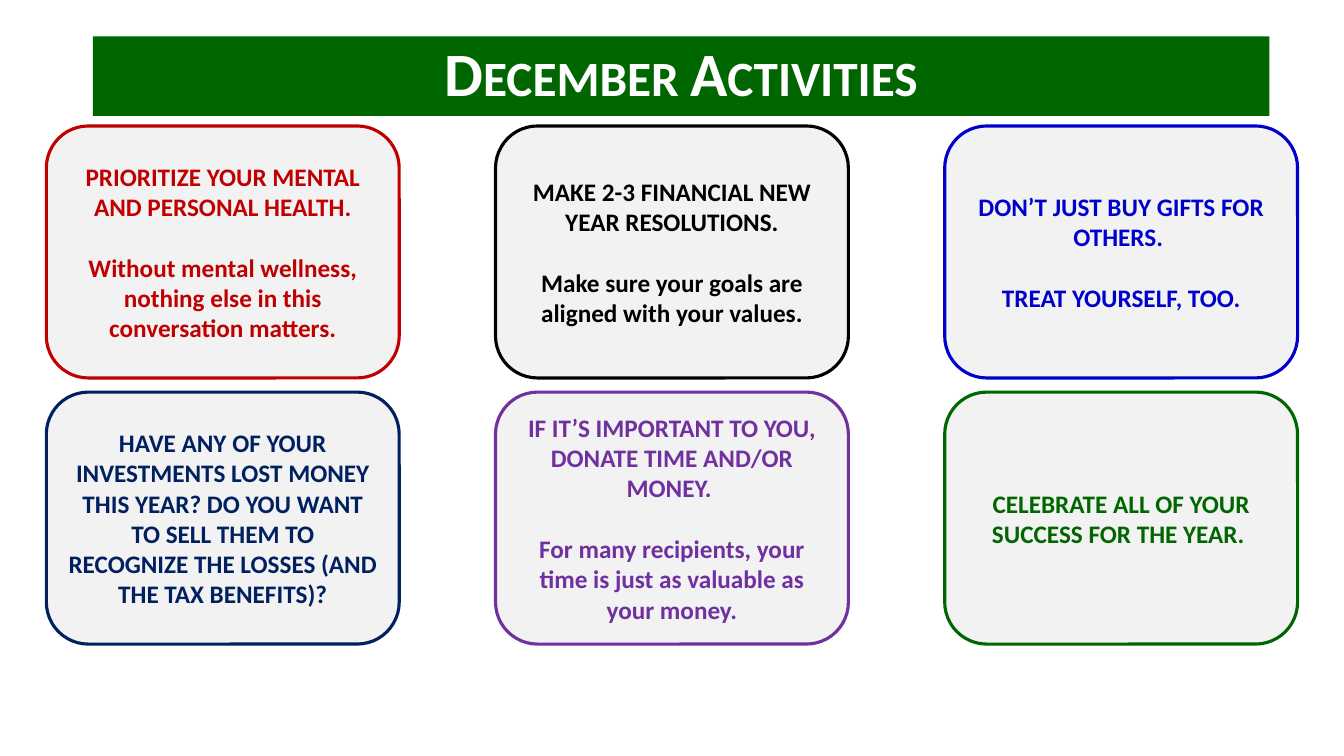
from pptx import Presentation
from pptx.dml.color import RGBColor
from pptx.enum.shapes import MSO_SHAPE
from pptx.enum.text import MSO_ANCHOR, MSO_AUTO_SIZE, PP_ALIGN
from pptx.util import Inches, Pt

ROUNDED = MSO_SHAPE.ROUNDED_RECTANGLE
MIDDLE = MSO_ANCHOR.MIDDLE
NO_AUTOFIT = MSO_AUTO_SIZE.NONE
CENTER = PP_ALIGN.CENTER

FONT = "Calibri"
GREEN, WHITE, CARD_FILL = "006600", "FFFFFF", "F2F2F2"

# Card grid, in inches
GRID_LEFT, GRID_TOP = 0.46, 1.25
CARD_WIDTH, CARD_HEIGHT = 3.5, 2.5
COLUMN_GAP, ROW_GAP = 0.955, 0.14

# Rows of cards: colour, then paragraphs
ACTIVITIES = [
    [
        ("C00000", ["PRIORITIZE YOUR MENTAL AND PERSONAL HEALTH.",
                    "Without mental wellness, nothing else in this conversation matters."]),
        ("000000", ["MAKE 2-3 FINANCIAL NEW YEAR RESOLUTIONS.",
                    "Make sure your goals are aligned with your values."]),
        ("0000CC", ["DON’T JUST BUY GIFTS FOR OTHERS. ",
                    "TREAT YOURSELF, TOO."]),
    ],
    [
        ("002060", ["HAVE ANY OF YOUR INVESTMENTS LOST MONEY THIS YEAR? DO YOU WANT "
                    "TO SELL THEM TO RECOGNIZE THE LOSSES (AND THE TAX BENEFITS)?"]),
        ("7030A0", ["IF IT’S IMPORTANT TO YOU, DONATE TIME AND/OR MONEY. ",
                    "For many recipients, your time is just as valuable as your money."]),
        (GREEN, ["CELEBRATE ALL OF YOUR SUCCESS FOR THE YEAR. "]),
    ],
]


def paint(color_format, hex_color):
    color_format.rgb = RGBColor.from_string(hex_color)


def fill_shape(shape, hex_color):
    shape.fill.solid()
    paint(shape.fill.fore_color, hex_color)


def format_text(para, size, hex_color):
    para.alignment = CENTER
    for span in para.runs:
        span.font.name = FONT
        span.font.size = Pt(size)
        span.font.bold = True
        paint(span.font.color, hex_color)


def add_banner(page, left, top, width, height):
    """Title placeholder as a green banner in small caps."""
    banner = page.shapes.title
    banner.left, banner.top = Inches(left), Inches(top)
    banner.width, banner.height = Inches(width), Inches(height)
    fill_shape(banner, GREEN)
    frame = banner.text_frame
    frame.text = "December Activities"
    frame.auto_size = NO_AUTOFIT
    frame.vertical_anchor = MIDDLE
    para = frame.paragraphs[0]
    para.line_spacing = 0.9
    format_text(para, 44, WHITE)
    for span in para.runs:
        span.font._element.set("cap", "small")


def add_card(page, left, top, width, height, hex_color, lines):
    """Rounded card with outline and text in one colour."""
    card = page.shapes.add_shape(ROUNDED, Inches(left), Inches(top),
                                 Inches(width), Inches(height))
    card.shadow.inherit = False
    fill_shape(card, CARD_FILL)
    paint(card.line.color, hex_color)
    card.line.width = Pt(2.25)
    frame = card.text_frame
    frame.word_wrap = True
    frame.vertical_anchor = MIDDLE
    frame.text = "\n".join(lines)
    for index, para in enumerate(frame.paragraphs):
        format_text(para, 18, hex_color)
        if index:
            para.space_before = Pt(22)


def add_activity_grid(page, left, top):
    for row, cards in enumerate(ACTIVITIES):
        for column, (hex_color, lines) in enumerate(cards):
            add_card(page,
                     left + column * (CARD_WIDTH + COLUMN_GAP),
                     top + row * (CARD_HEIGHT + ROW_GAP),
                     CARD_WIDTH, CARD_HEIGHT, hex_color, lines)


def main():
    deck = Presentation()
    deck.slide_width, deck.slide_height = Inches(13.33), Inches(7.5)
    page = deck.slides.add_slide(deck.slide_layouts[5])
    add_banner(page, 0.92, 0.36, 11.67, 0.79)
    add_activity_grid(page, GRID_LEFT, GRID_TOP)
    deck.save("out.pptx")


if __name__ == "__main__":
    main()
